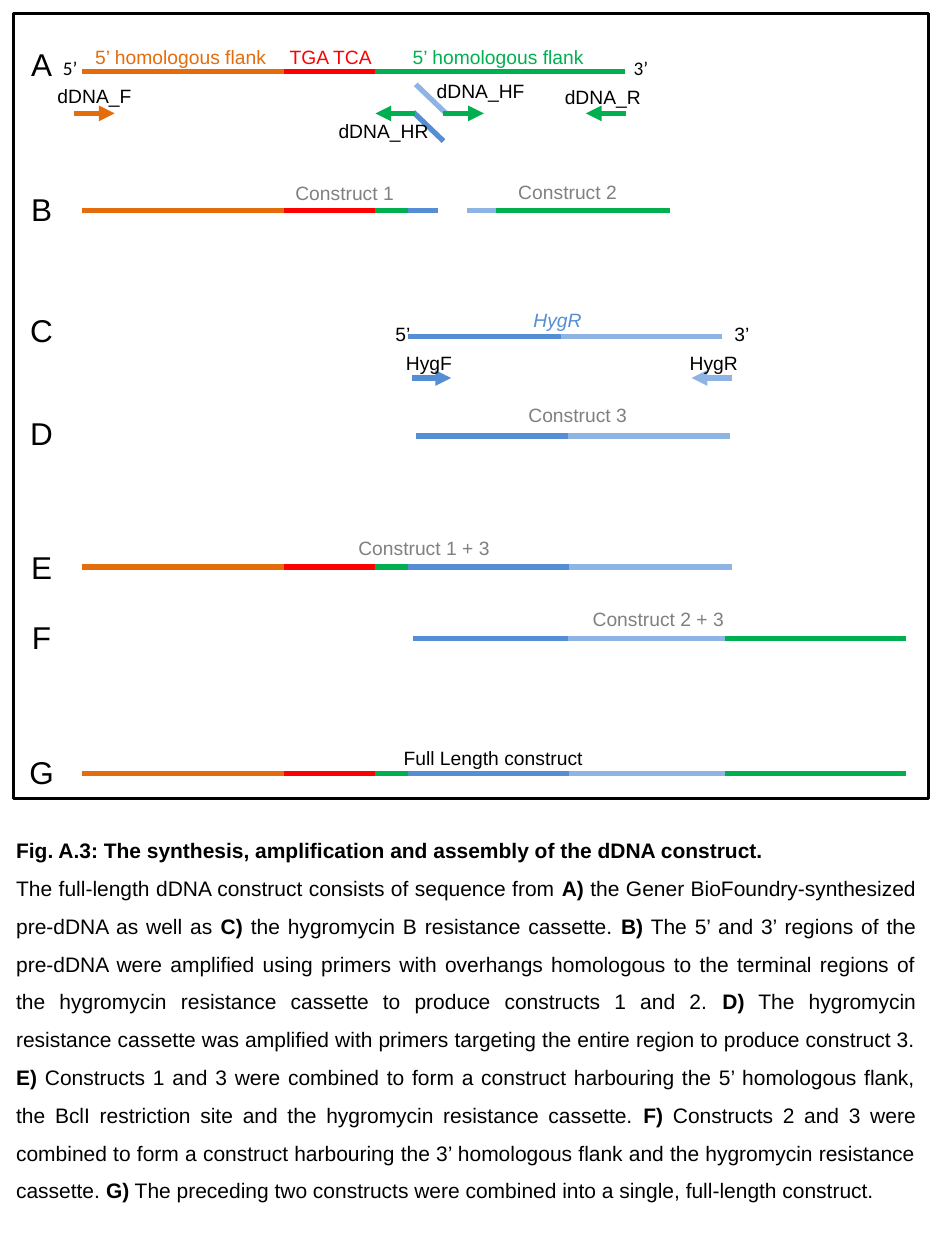
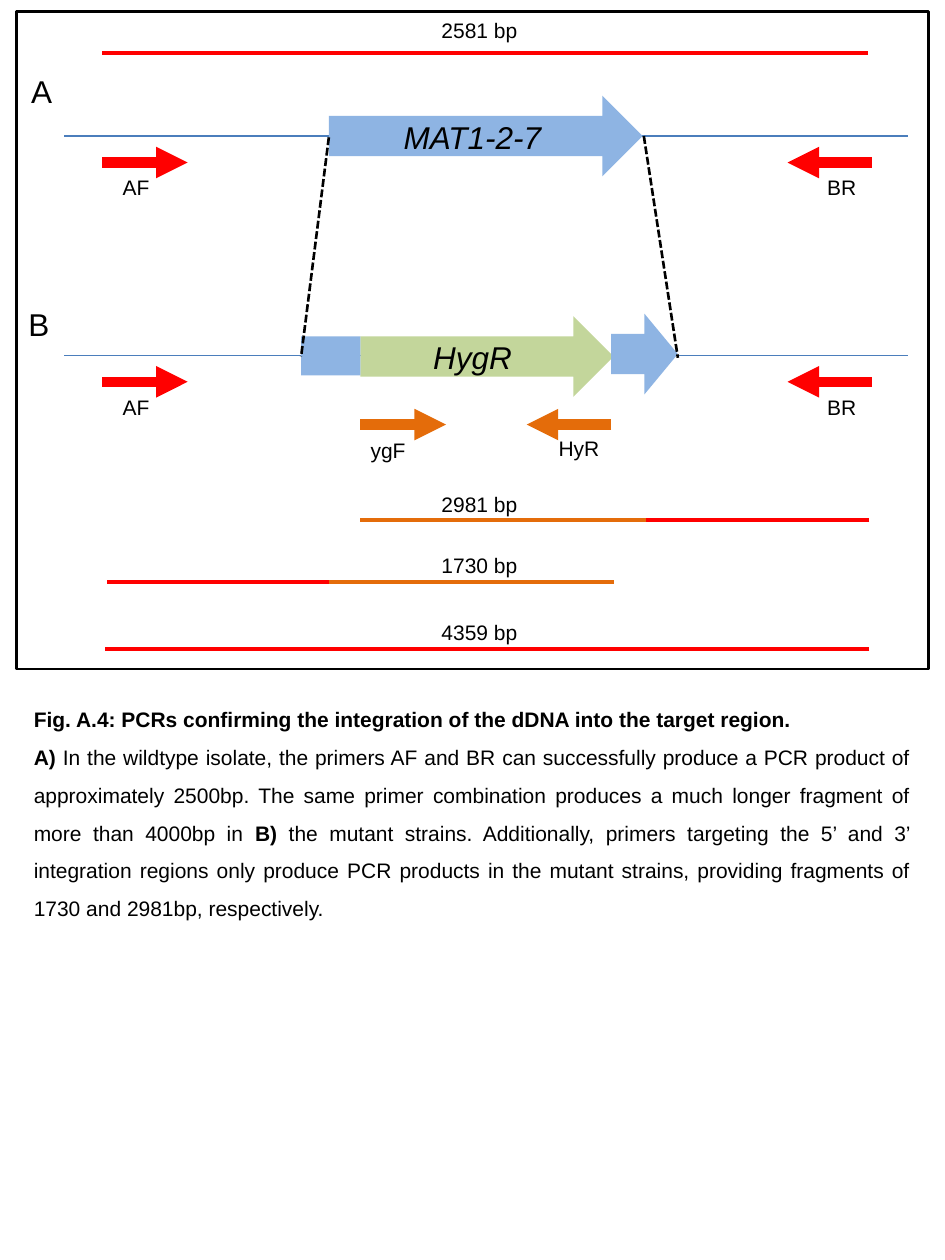
from lxml.etree import SubElement
from pptx import Presentation
from pptx.dml.color import RGBColor
from pptx.enum.dml import MSO_LINE
from pptx.enum.shapes import MSO_CONNECTOR, MSO_SHAPE
from pptx.enum.text import MSO_AUTO_SIZE, PP_ALIGN
from pptx.oxml.ns import qn
from pptx.util import Inches, Pt

BLACK, GREY, RED, ORANGE = "000000", "808080", "FF0000", "E46C0A"
GREEN, BLUE, LIGHT, THIN_BLUE, OLIVE = "00B050", "558ED5", "8EB4E3", "4B7EBC", "C3D69B"

ASSEMBLY_TITLE = "Fig. A.3: The synthesis, amplification and assembly of the dDNA construct. "
ASSEMBLY_CAPTION = [
    ("", "The full-length dDNA construct consists of sequence from "),
    ("A)", " the Gener BioFoundry-synthesized pre-dDNA as well as "),
    ("C)", " the hygromycin B resistance cassette. "),
    ("B)", " The 5’ and 3’ regions of the pre-dDNA were amplified using primers with overhangs "
           "homologous to the terminal regions of the hygromycin resistance cassette to produce "
           "constructs 1 and 2. "),
    ("D)", " The hygromycin resistance cassette was amplified with primers targeting the entire "
           "region to produce construct 3. "),
    ("E)", " Constructs 1 and 3 were combined to form a construct harbouring the 5’ homologous "
           "flank, the BclI restriction site and the hygromycin resistance cassette. "),
    ("F)", " Constructs 2 and 3 were combined to form a construct harbouring the 3’ homologous "
           "flank and the hygromycin resistance cassette. "),
    ("G)", " The preceding two constructs were combined into a single, full-length construct. "),
]
PCR_TITLE = "Fig. A.4: PCRs confirming the integration of the dDNA into the target region. "
PCR_CAPTION = [
    ("A) ", "In the wildtype isolate, the primers AF and BR can successfully produce a PCR product "
            "of approximately 2500bp. The same primer combination produces a much longer fragment "
            "of more than 4000bp in "),
    ("B)", " the mutant strains. Additionally, primers targeting the 5’ and 3’ integration regions "
           "only produce PCR products in the mutant strains, providing fragments of 1730 and "
           "2981bp, respectively. "),
]

ASSEMBLY_ROWS = {"A": 0.31, "B": 1.46, "C": 2.42, "D": 3.24, "E": 4.3, "F": 4.86, "G": 5.93}
SITE = (2.25, 2.98, RED)
SHORT_GREEN = (2.88, 3.25, GREEN)
LONG_FLANK = (0.65, 2.67, ORANGE)
RIGHT_FLANK = (5.75, 7.19, GREEN)
JOINED_LEFT = [(0.65, 2.3, ORANGE), SHORT_GREEN, SITE, (3.24, 4.53, BLUE), (4.52, 5.81, LIGHT)]
STRANDS = [
    (0.57, [LONG_FLANK, (2.88, 4.96, GREEN), SITE]),
    (1.67, [LONG_FLANK, SHORT_GREEN, SITE, (3.24, 3.48, BLUE), (3.89, 5.32, GREEN), (3.71, 3.94, LIGHT)]),
    (2.67, [(3.24, 4.53, BLUE), (4.45, 5.73, LIGHT)]),
    (3.46, [(3.3, 4.59, BLUE), (4.51, 5.79, LIGHT)]),
    (4.5, JOINED_LEFT),
    (5.07, [(3.28, 4.56, BLUE), (4.51, 5.79, LIGHT), RIGHT_FLANK]),
    (6.14, JOINED_LEFT + [RIGHT_FLANK]),
]
OVERHANGS = [((3.28, 0.89), (3.52, 1.12), BLUE), ((3.3, 0.67), (3.54, 0.9), LIGHT)]
ASSEMBLY_PRIMERS = [
    (0.59, 0.91, 0.9, ORANGE), (4.97, 4.65, 0.9, GREEN), (3.29, 2.98, 0.9, GREEN),
    (3.52, 3.84, 0.9, GREEN), (3.27, 3.58, 3, BLUE), (5.81, 5.49, 3, LIGHT),
]
ASSEMBLY_LABELS = [
    ("5’ homologous flank", 0.65, 0.31, 1.57, ORANGE),
    ("TGA TCA", 2.19, 0.31, 0.87, RED),
    ("5’ homologous flank", 3.17, 0.31, 1.57, GREEN),
    ("dDNA_F", 0.35, 0.62, 0.8, BLACK),
    ("dDNA_R", 4.38, 0.63, 0.81, BLACK),
    ("dDNA_HF", 3.36, 0.58, 0.91, BLACK),
    ("dDNA_HR", 2.58, 0.9, 0.93, BLACK),
    ("Construct 1", 2.24, 1.39, 0.99, GREY),
    ("Construct 2", 4.01, 1.38, 0.99, GREY),
    ("HygF", 3.12, 2.74, 0.57, BLACK),
    ("HygR", 5.37, 2.74, 0.59, BLACK),
    ("Construct 3", 4.09, 3.15, 0.99, GREY),
    ("Construct 1 + 3", 2.74, 4.21, 1.25, GREY),
    ("Construct 2 + 3", 4.6, 4.77, 1.25, GREY),
    ("Full Length construct", 3.1, 5.87, 1.63, BLACK),
]
STRAND_ENDS = [
    ("5’", 0.4, 0.4, "Calibri"), ("3’", 4.93, 0.4, "Calibri"),
    ("5’", 3.04, 2.51, "Arial"), ("3’", 5.73, 2.51, "Arial"),
]

LOCUS_LINES = (1.08, 2.82)
GENES = [
    (MSO_SHAPE.RIGHT_ARROW, 2.61, 0.76, 2.49, 0.64, LIGHT),
    (MSO_SHAPE.RIGHT_ARROW, 2.86, 2.51, 2.01, 0.64, OLIVE),
    (MSO_SHAPE.RECTANGLE, 2.39, 2.67, 0.47, 0.31, LIGHT),
    (MSO_SHAPE.RIGHT_ARROW, 4.85, 2.49, 0.53, 0.64, LIGHT),
]
GENE_NAMES = [("MAT1-2-7", 0.89), ("HygR", 2.63)]
INSERTION_EDGES = [((2.61, 1.09), (2.39, 2.83)), ((5.11, 1.08), (5.38, 2.84))]
OUTER_PRIMERS = [("AF", 0.81, 1.49, 0.87, 0.42), ("BR", 6.92, 6.25, 6.46, 0.44)]
INNER_PRIMERS = [("ygF", 2.86, 3.54, 2.84, 3.42, 0.48), ("HyR", 4.85, 4.18, 4.33, 3.41, 0.53)]
PRODUCTS = [
    ("2581 bp", 0.09, 0.42, [(6.89, 0.81, RED)]),
    ("2981 bp", 3.85, 4.13, [(6.9, 5.13, RED), (5.13, 2.86, ORANGE)]),
    ("1730 bp", 4.34, 4.62, [(2.61, 0.85, RED), (4.87, 2.61, ORANGE)]),
    ("4359 bp", 4.87, 5.15, [(6.9, 0.83, RED)]),
]


def color(value):
    return RGBColor.from_string(value)


def add_line(page, start, end, tint, weight, arrow=False, dash=None):
    ends = [Inches(value) for value in (*start, *end)]
    line = page.shapes.add_connector(MSO_CONNECTOR.STRAIGHT, *ends)
    line.line.color.rgb = color(tint)
    line.line.width = Pt(weight)
    if dash:
        line.line.dash_style = dash
    properties = line._element.spPr
    if arrow:
        SubElement(properties.find(qn("a:ln")), qn("a:tailEnd"), type="triangle")
    SubElement(properties, qn("a:effectLst"))


def add_pieces(page, y, pieces, weight):
    for start, end, tint in pieces:
        add_line(page, (start, y), (end, y), tint, weight)


def add_solid(page, kind, left, top, width, height, fill=None):
    shape = page.shapes.add_shape(kind, Inches(left), Inches(top), Inches(width), Inches(height))
    shape.shadow.inherit = False
    if fill:
        shape.fill.solid()
        shape.fill.fore_color.rgb = color(fill)
        shape.line.fill.background()
    else:
        shape.fill.background()
        shape.line.color.rgb = color(BLACK)
        shape.line.width = Pt(1.5)


def add_frame(page, left, top, width, height):
    add_solid(page, MSO_SHAPE.RECTANGLE, left, top, width, height)


def add_box(page, left, top, width, height, wrap=False):
    box = page.shapes.add_textbox(Inches(left), Inches(top), Inches(width), Inches(height))
    box.text_frame.word_wrap = wrap
    box.text_frame.auto_size = MSO_AUTO_SIZE.SHAPE_TO_FIT_TEXT
    return box.text_frame


def style(para, size, tint=BLACK, face="Arial", align=PP_ALIGN.CENTER):
    para.alignment = align
    para.font.size = Pt(size)
    para.font.name = face
    para.font.color.rgb = color(tint)


def add_label(page, text, left, top, width, size, tint=BLACK, italic=False,
              face="Arial", align=PP_ALIGN.CENTER):
    height = {11: 0.29, 12: 0.3, 18: 0.4}[size]
    para = add_box(page, left, top, width, height, wrap=size == 18).paragraphs[0]
    para.text = text
    style(para, size, tint, face, align)
    para.font.italic = italic


def add_caption(page, title, parts, left, top, width, height):
    frame = add_box(page, left, top, width, height, wrap=True)
    heading, body = frame.paragraphs[0], frame.add_paragraph()
    for para in (heading, body):
        style(para, 12, align=PP_ALIGN.JUSTIFY)
        para.line_spacing = 1.5
    heading.text = title
    heading.font.bold = True
    for marker, sentence in parts:
        for text, bold in ((marker, True), (sentence, False)):
            if text:
                span = body.add_run()
                span.text = text
                span.font.bold = bold


def build_assembly(page):
    add_caption(page, ASSEMBLY_TITLE, ASSEMBLY_CAPTION, 0.03, 6.5, 7.34, 3.1)
    for letter, top in ASSEMBLY_ROWS.items():
        add_label(page, letter, 0.13, top, 0.4, 18)
    for y, pieces in STRANDS:
        add_pieces(page, y, pieces, 3)
    for start, end, tint in OVERHANGS:
        add_line(page, start, end, tint, 3)
    for start, end, y, tint in ASSEMBLY_PRIMERS:
        add_line(page, (start, y), (end, y), tint, 3, arrow=True)
    for text, left, top, width, tint in ASSEMBLY_LABELS:
        add_label(page, text, left, top, width, 11, tint)
    add_label(page, "HygR", 4.13, 2.4, 0.59, 11, BLUE, italic=True)
    for text, left, top, face in STRAND_ENDS:
        add_label(page, text, left, top, 0.32, 11, face=face, align=PP_ALIGN.LEFT)
    add_frame(page, 0.11, 0.11, 7.26, 6.23)


def build_pcr(page):
    add_caption(page, PCR_TITLE, PCR_CAPTION, 0.17, 5.46, 7.16, 1.88)
    add_label(page, "A", 0.13, 0.52, 0.4, 18)
    add_label(page, "B", 0.11, 2.37, 0.4, 18)
    for y in LOCUS_LINES:
        add_line(page, (0.51, y), (7.21, y), THIN_BLUE, 0.75)
        for name, start, end, left, width in OUTER_PRIMERS:
            add_line(page, (start, y + 0.21), (end, y + 0.21), RED, 6, arrow=True)
            add_label(page, name, left, y + 0.26, width, 12)
    for gene in GENES:
        add_solid(page, *gene)
    for start, end in INSERTION_EDGES:
        add_line(page, start, end, BLACK, 1.5, dash=MSO_LINE.SQUARE_DOT)
    for name, top in GENE_NAMES:
        add_label(page, name, 3.08, top, 1.34, 18, italic=True)
    for name, start, end, left, top, width in INNER_PRIMERS:
        add_line(page, (start, 3.37), (end, 3.37), ORANGE, 6, arrow=True)
        add_label(page, name, left, top, width, 12)
    for size, top, y, pieces in PRODUCTS:
        add_pieces(page, y, pieces, 2.25)
        add_label(page, size, 3.4, top, 0.81, 12)
    add_frame(page, 0.13, 0.09, 7.24, 5.22)


def main():
    deck = Presentation()
    deck.slide_width, deck.slide_height = Inches(7.5), Inches(10)
    for build in (build_assembly, build_pcr):
        build(deck.slides.add_slide(deck.slide_layouts[6]))
    deck.save("out.pptx")


if __name__ == "__main__":
    main()
